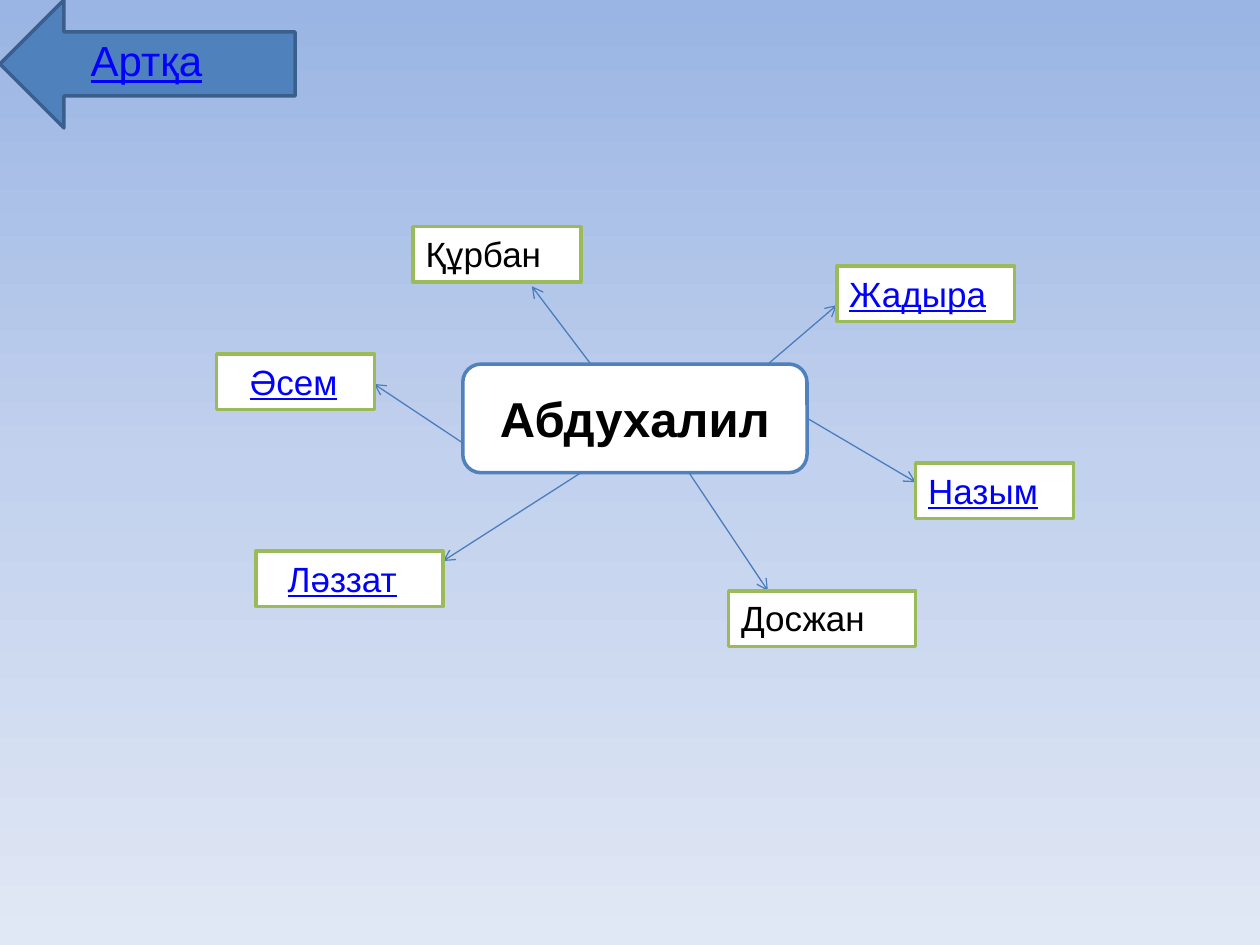
from copy import deepcopy
from dataclasses import dataclass

from lxml.etree import SubElement
from pptx import Presentation
from pptx.dml.color import RGBColor
from pptx.enum.shapes import MSO_CONNECTOR, MSO_SHAPE
from pptx.enum.text import MSO_ANCHOR, PP_ALIGN
from pptx.oxml.ns import qn
from pptx.util import Cm, Pt


@dataclass(frozen=True)
class Theme:
    font: str = "Arial"
    background: tuple = ((0, "9AB5E4"), (0.5, "C2D1ED"), (1, "E1E8F5"))
    paper: str = "FFFFFF"
    ink: str = "000000"
    link: str = "0000FF"
    blue: str = "4F81BD"
    blue_dark: str = "3A5F8C"
    ray: str = "4B7EBC"
    green: str = "9BBB59"
    hub_size: int = 28
    back_size: int = 24
    name_size: int = 20
    border: float = 2
    ray_width: float = 0.75


def rgb(value):
    return RGBColor.from_string(value)


def write(tf, text, *, font, size, color, bold=False, underline=False,
          align=PP_ALIGN.LEFT, anchor=MSO_ANCHOR.TOP, left=0.25):
    tf.word_wrap = True
    tf.vertical_anchor = anchor
    tf.margin_left = Cm(left)
    p = tf.paragraphs[0]
    p.alignment = align
    r = p.add_run()
    r.text = text
    r.font.name, r.font.size = font, Pt(size)
    r.font.bold, r.font.underline = bold, underline
    r.font.color.rgb = rgb(color)


class MindMap:
    def __init__(self, slide, theme):
        self.s, self.theme = slide, theme

    def background(self):
        fill = self.s.background.fill
        fill.gradient()
        fill.gradient_angle = 270
        stop_list = next(self.s.element.iter(qn("a:gsLst")))
        stop_list.append(deepcopy(stop_list[0]))
        for stop, (position, color) in zip(fill.gradient_stops, self.theme.background):
            stop.position = position
            stop.color.rgb = rgb(color)

    def shape(self, kind, box, fill, line):
        sp = self.s.shapes.add_shape(kind, *map(Cm, box))
        sp.shadow.inherit = False
        sp.fill.solid()
        sp.fill.fore_color.rgb = rgb(fill)
        sp.line.color.rgb = rgb(line)
        sp.line.width = Pt(self.theme.border)
        return sp

    def hub(self, text, box):
        t = self.theme
        sp = self.shape(MSO_SHAPE.ROUNDED_RECTANGLE, box, t.paper, t.blue)
        write(sp.text_frame, text, font=t.font, size=t.hub_size, color=t.ink,
              bold=True, align=PP_ALIGN.CENTER, anchor=MSO_ANCHOR.MIDDLE)

    def name(self, text, x, y, w, linked, indent):
        t = self.theme
        sp = self.shape(MSO_SHAPE.RECTANGLE, (x, y, w, 1.12), t.paper, t.green)
        write(sp.text_frame, text, font=t.font, size=t.name_size,
              color=t.link if linked else t.ink, underline=linked, left=0.25 + indent)

    def ray(self, start, end):
        c = self.s.shapes.add_connector(MSO_CONNECTOR.STRAIGHT, *map(Cm, start + end))
        c.line.color.rgb = rgb(self.theme.ray)
        c.line.width = Pt(self.theme.ray_width)
        SubElement(c.line._get_or_add_ln(), qn("a:tailEnd"), type="arrow")
        SubElement(c._element.spPr, qn("a:effectLst"))

    def back(self, text):
        t = self.theme
        self.shape(MSO_SHAPE.LEFT_ARROW, (0, 0, 5.95, 2.58), t.blue, t.blue_dark)
        label = self.s.shapes.add_textbox(Cm(1.58), Cm(0.58), Cm(4.17), Cm(1.28))
        write(label.text_frame, text, font=t.font, size=t.back_size,
              color=t.link, underline=True)


def main():
    prs = Presentation()
    prs.slide_width, prs.slide_height = Cm(25.4), Cm(19.05)
    m = MindMap(prs.slides.add_slide(prs.slide_layouts[6]), Theme())
    m.background()

    # Centre of the map
    m.hub("Абдухалил", (9.33, 7.34, 6.94, 2.19))

    # Names: text, left, top, width, linked, indent, ray start, ray end
    names = [
        ("Құрбан", 8.33, 4.57, 3.38, False, 0, (11.91, 7.34), (10.72, 5.77)),
        ("Жадыра", 16.87, 5.36, 3.58, True, 0, (15.48, 7.34), (16.87, 6.15)),
        ("Әсем", 4.37, 7.14, 3.18, True, 0.42, (9.33, 8.93), (7.54, 7.74)),
        ("Назым", 18.46, 9.33, 3.18, True, 0, (16.27, 8.43), (18.46, 9.72)),
        ("Ләззат", 5.16, 11.11, 3.77, True, 0.39, (11.71, 9.53), (8.93, 11.31)),
        ("Досжан", 14.69, 11.91, 3.77, False, 0, (13.89, 9.53), (15.48, 11.91)),
    ]
    for text, x, y, w, linked, indent, start, end in names:
        m.ray(start, end)
        m.name(text, x, y, w, linked, indent)

    # Back arrow
    m.back("Артқа")
    prs.save("out.pptx")


if __name__ == "__main__":
    main()
